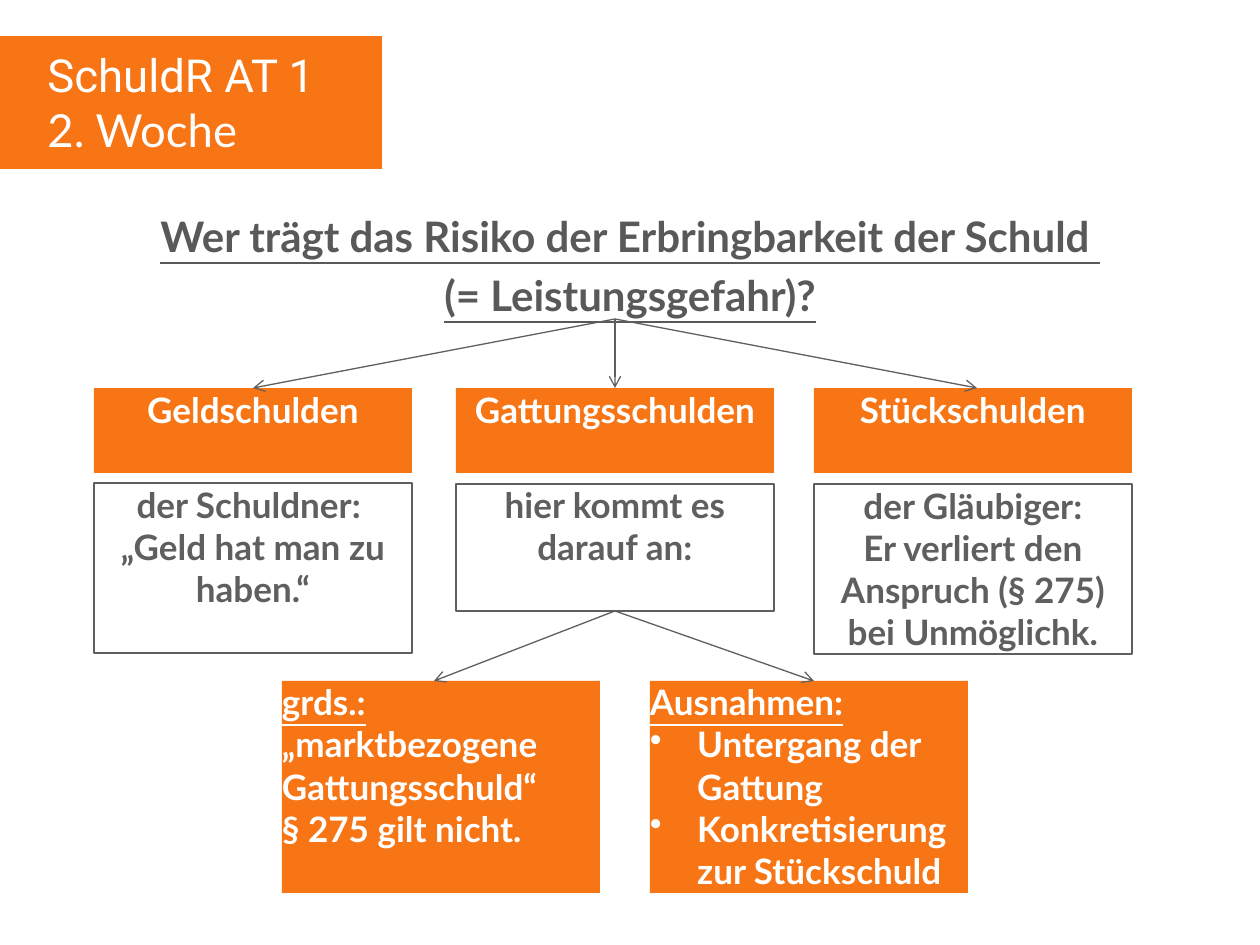
import pptx
import pptx.util
import pptx.dml.color
import pptx.enum.shapes
import pptx.enum.text
import lxml.etree

PX = 914400 / 126
ORANGE, GREY, TITLE_GREY, WHITE = "F77515", "5F5F5F", "595959", "FFFFFF"
LEFT = pptx.enum.text.PP_ALIGN.LEFT
CENTER = pptx.enum.text.PP_ALIGN.CENTER
RECTANGLE = pptx.enum.shapes.MSO_SHAPE.RECTANGLE
COLUMN_WIDTH = 318


def color(hex_string):
    return pptx.dml.color.RGBColor.from_string(hex_string)


def write(box, lines, size, ink, align, bold=True, inset=None):
    """Fill a shape or text box with top-anchored paragraphs of one style."""
    frame = box.text_frame
    frame.word_wrap = True
    frame.vertical_anchor = pptx.enum.text.MSO_ANCHOR.TOP
    if inset is not None:
        frame.margin_left = frame.margin_right = inset
        frame.margin_top = frame.margin_bottom = inset
    frame.text = "\n".join(lines)
    for para in frame.paragraphs:
        para.alignment = align
        para.font.name = "Lato"
        para.font.size = pptx.util.Pt(size)
        para.font.bold = bold
        para.font.color.rgb = color(ink)
    return frame.paragraphs


deck = pptx.Presentation()
deck.slide_width = round(1260 * PX)
deck.slide_height = round(945 * PX)
page = deck.slides.add_slide(deck.slide_layouts[6])

# Course banner and question
banner = page.shapes.add_shape(RECTANGLE, 0, round(36 * PX), round(382 * PX), round(133 * PX))
banner.shadow.inherit = False
banner.fill.solid()
banner.fill.fore_color.rgb = color(ORANGE)
banner.line.fill.background()

question = page.shapes.add_textbox(*[round(n * PX) for n in (15, 204, 1230, 183)])
question_lines = ["Wer trägt das Risiko der Erbringbarkeit der Schuld ", "(= Leistungsgefahr)?"]
for para in write(question, question_lines, 24, TITLE_GREY, CENTER):
    para.space_after = pptx.util.Pt(5)
    para.font.underline = True

course = page.shapes.add_textbox(*[round(n * PX) for n in (35, 41, 328, 123)])
course_paras = write(course, ["SchuldR AT 1", "2. Woche"], 26, WHITE, LEFT, bold=False)
course_paras[0].font.name = "Roboto"

# Boxes of the decision tree: left, top, height, filled, lines
boxes = [
    (94, 388, 85, True, ["Geldschulden"]),
    (456, 388, 85, True, ["Gattungsschulden"]),
    (814, 388, 85, True, ["Stückschulden"]),
    (94, 483, 170, False, ["der Schuldner: ", "„Geld hat man zu haben.“"]),
    (456, 484, 127, False, ["hier kommt es darauf an:"]),
    (814, 484, 170, False,
     ["der Gläubiger:", "Er verliert den Anspruch (§ 275) bei Unmöglichk."]),
    (282, 681, 212, True, ["grds.:", "„marktbezogene Gattungsschuld“", "§ 275 gilt nicht."]),
    (650, 681, 212, True,
     ["Ausnahmen:", "Untergang der Gattung", "Konkretisierung zur Stückschuld"]),
]
for left, top, height, filled, lines in boxes:
    box = page.shapes.add_shape(
        RECTANGLE, *[round(n * PX) for n in (left, top, COLUMN_WIDTH, height)])
    box.shadow.inherit = False
    box.fill.solid()
    box.fill.fore_color.rgb = color(ORANGE if filled else WHITE)
    if filled:
        box.line.fill.background()
    else:
        box.line.color.rgb = color(GREY)
        box.line.width = pptx.util.Pt(0.75)
    detailed = len(lines) == 3
    paras = write(box, lines, 20, WHITE if filled else GREY,
                  LEFT if detailed else CENTER, inset=0)
    if detailed:
        paras[0].font.underline = True
    if lines[0] == "Ausnahmen:":
        for para in paras[1:]:
            properties = para._p.get_or_add_pPr()
            properties.set("marL", "342900")
            properties.set("indent", "-342900")
            bullet = lxml.etree.Element(pptx.oxml.ns.qn("a:buChar"), char="•")
            properties.insert(0, bullet)

# Arrows fan out from the question and from the middle column
for start_y, end_y, targets in [(319, 388, (253, 977, 615)), (611, 681, (434, 814))]:
    for end_x in targets:
        arrow = page.shapes.add_connector(
            pptx.enum.shapes.MSO_CONNECTOR.STRAIGHT,
            *[round(n * PX) for n in (615, start_y, end_x, end_y)])
        arrow.line.color.rgb = color(GREY)
        arrow.line.width = pptx.util.Pt(0.75)
        lxml.etree.SubElement(
            arrow.line._get_or_add_ln(), pptx.oxml.ns.qn("a:tailEnd"), type="arrow")
        lxml.etree.SubElement(arrow._element.spPr, pptx.oxml.ns.qn("a:effectLst"))

deck.save("out.pptx")
